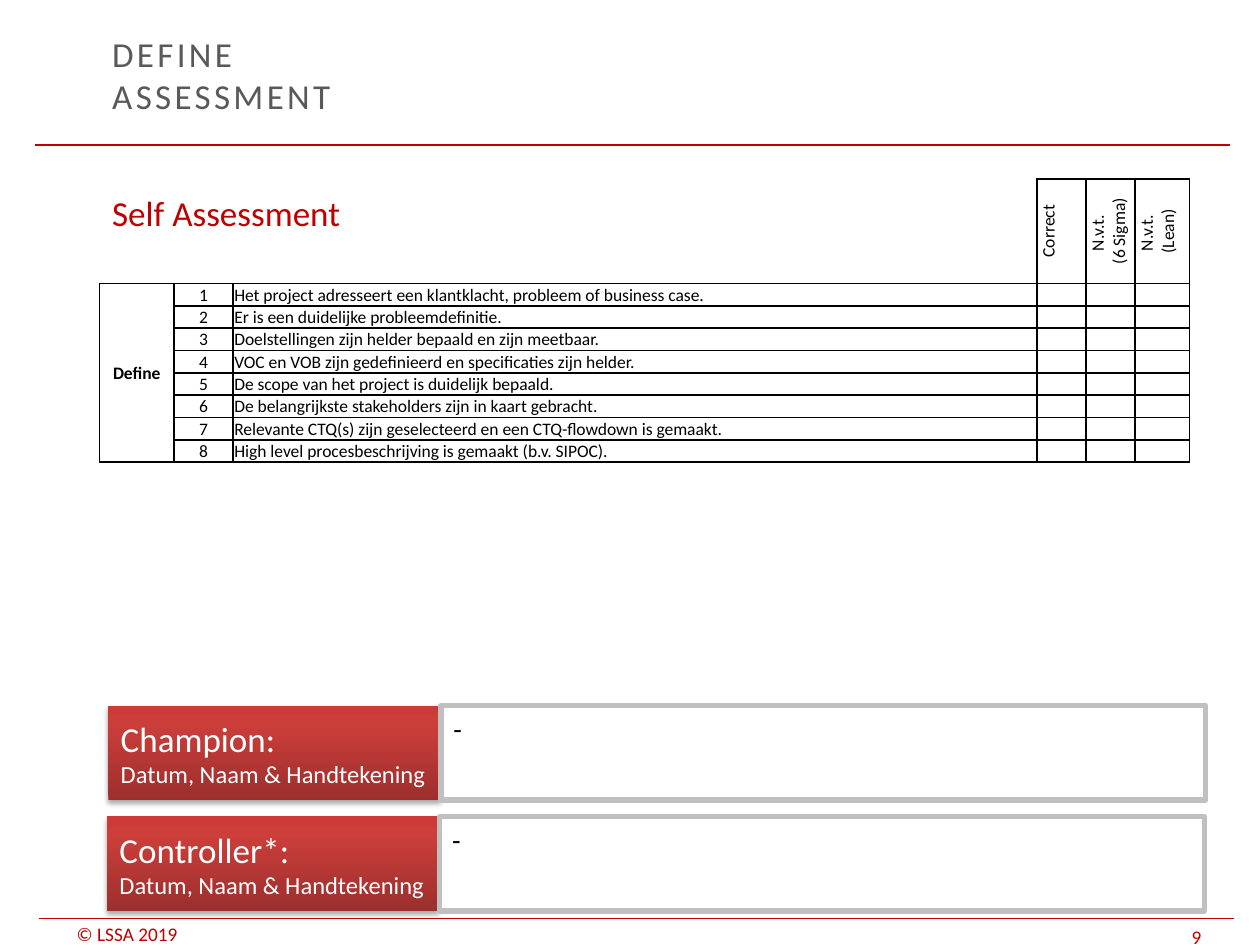
from copy import deepcopy

from lxml.etree import SubElement
from pptx import Presentation
from pptx.dml.color import RGBColor
from pptx.enum.shapes import MSO_CONNECTOR, MSO_SHAPE
from pptx.enum.text import MSO_ANCHOR as Anchor, PP_ALIGN as Align
from pptx.oxml.ns import qn
from pptx.util import Inches, Pt

FONT = "Calibri"
COLORS = {
    "red": "C00000", "grey": "595959", "black": "000000", "white": "FFFFFF",
    "frame": "C0C0C0", "dark": "9C2F2D", "mid": "CB3E3A", "light": "CE3B37",
}
NO_STYLE = "{2D5ABB26-0587-4C30-8999-92F81FD0307C}"
HEADERS = ["Correct", "N.v.t. \v(6 Sigma)", "N.v.t. \v(Lean)"]
CRITERIA = [
    "Het project adresseert een klantklacht, probleem of business case.",
    "Er is een duidelijke probleemdefinitie.",
    "Doelstellingen zijn helder bepaald en zijn meetbaar.",
    "VOC en VOB zijn gedefinieerd en specificaties zijn helder.",
    "De scope van het project is duidelijk bepaald.",
    "De belangrijkste stakeholders zijn in kaart gebracht.",
    "Relevante CTQ(s) zijn geselecteerd en een CTQ-flowdown is gemaakt.",
    "High level procesbeschrijving is gemaakt (b.v. SIPOC).",
]


def rgb(name):
    return RGBColor.from_string(COLORS[name])


def add_text(paragraph, text, size, color, bold=False, align=Align.LEFT):
    paragraph.alignment = align
    runs = []
    for index, line in enumerate(text.split("\v")):
        if index:
            paragraph.add_line_break()
        run = paragraph.add_run()
        run.text = line
        run.font.name = FONT
        run.font.size = Pt(size)
        run.font.bold = bold
        run.font.color.rgb = rgb(color)
        runs.append(run)
    return runs


def place(shape, left, top, width, height):
    shape.left, shape.top = Inches(left), Inches(top)
    shape.width, shape.height = Inches(width), Inches(height)


def add_rule(slide, left, top, width):
    line = slide.shapes.add_connector(
        MSO_CONNECTOR.STRAIGHT, Inches(left), Inches(top), Inches(left + width), Inches(top))
    line.line.color.rgb = rgb("red")
    line.line.width = Pt(0.75)
    SubElement(line._element.spPr, qn("a:effectLst"))


def add_footer_text(slide, text, left, top, width, height):
    box = slide.shapes.add_textbox(Inches(left), Inches(top), Inches(width), Inches(height))
    frame = box.text_frame
    frame.word_wrap = True
    frame.vertical_anchor = Anchor.BOTTOM
    frame.margin_top = frame.margin_bottom = 0
    add_text(frame.paragraphs[0], text, 11, "red")


def fill_title(slide, left, top, width, height):
    title = slide.shapes.title
    place(title, left, top, width, height)
    title.text_frame.vertical_anchor = Anchor.MIDDLE
    for run in add_text(title.text_frame.paragraphs[0], "DEFINE\vASSESSMENT", 20, "grey"):
        run._r.get_or_add_rPr().set("spc", "190")


def fill_body(slide, left, top, width, height):
    body = slide.placeholders[1]
    place(body, left, top, width, height)
    paragraph = body.text_frame.paragraphs[0]
    properties = paragraph._p.get_or_add_pPr()
    properties.set("marL", str(Inches(0.38)))
    properties.set("indent", str(-Inches(0.38)))
    SubElement(properties, qn("a:buNone"))
    paragraph.space_before = Pt(0)
    add_text(paragraph, "Self Assessment", 20, "red")


def format_cell(cell, edges):
    cell.margin_left = cell.margin_right = cell.margin_top = Inches(0.01)
    cell.margin_bottom = 0
    cell.vertical_anchor = Anchor.MIDDLE
    properties = cell._tc.get_or_add_tcPr()
    for edge in "LRTB":
        border = SubElement(properties, qn(f"a:ln{edge}"), w=str(Pt(1)))
        if edge in edges:
            solid = SubElement(border, qn("a:solidFill"))
            SubElement(solid, qn("a:srgbClr"), val=COLORS["black"])
        else:
            SubElement(border, qn("a:noFill"))
    cell.fill.background()
    SubElement(cell.text_frame.paragraphs[0]._p, qn("a:endParaRPr"), sz="1000")


def add_checklist(slide, left, top, width, height):
    widths = [0.59, 0.47, 6.38, 0.39, 0.39, 0.43]
    header_height = 0.83
    row_height = (height - header_height) / len(CRITERIA)
    table = slide.shapes.add_table(
        len(CRITERIA) + 1, len(widths),
        Inches(left), Inches(top), Inches(width), Inches(height)).table
    table.first_row = table.horz_banding = False
    table._tbl.tblPr.find(qn("a:tableStyleId")).text = NO_STYLE
    for column, column_width in zip(table.columns, widths):
        column.width = Inches(column_width)
    for index, row in enumerate(table.rows):
        row.height = Inches(row_height if index else header_height)
        for column, cell in enumerate(row.cells):
            blank = index == 0 and column < 3
            format_cell(cell, ("RB" if column == 2 else "B") if blank else "LRTB")

    def write(row, column, text, **style):
        cell = table.cell(row, column)
        add_text(cell.text_frame.paragraphs[0], text, 10, "black", **style)
        return cell

    for column, header in enumerate(HEADERS, 3):
        cell = write(0, column, header, align=Align.CENTER)
        cell._tc.tcPr.set("vert", "vert270")
    table.cell(1, 0).merge(table.cell(len(CRITERIA), 0))
    write(1, 0, "Define", bold=True, align=Align.CENTER)
    for row, criterion in enumerate(CRITERIA, 1):
        write(row, 1, str(row), align=Align.CENTER)
        write(row, 2, criterion)


def add_rectangle(slide, left, top, width, height):
    shape = slide.shapes.add_shape(
        MSO_SHAPE.RECTANGLE, Inches(left), Inches(top), Inches(width), Inches(height))
    shape.shadow.inherit = False
    shape.text_frame.word_wrap = True
    return shape


def add_red_gradient(shape):
    shape.fill.gradient()
    shape.fill.gradient_angle = 90
    stop_list = shape._element.spPr.find(qn("a:gradFill")).find(qn("a:gsLst"))
    stop_list.append(deepcopy(stop_list[0]))
    stops = [(0, "dark"), (0.8, "mid"), (1, "light")]
    for stop, (position, color) in zip(shape.fill.gradient_stops, stops):
        stop.position = position
        stop.color.rgb = rgb(color)


def add_soft_shadow(shape):
    effects = shape._element.spPr.find(qn("a:effectLst"))
    shadow = SubElement(effects, qn("a:outerShdw"), blurRad=str(Pt(3.1)),
                        dist=str(Pt(1.8)), dir="5400000", rotWithShape="0")
    color = SubElement(shadow, qn("a:srgbClr"), val=COLORS["black"])
    SubElement(color, qn("a:alpha"), val="35000")


def add_signature(slide, role, left, top, width, height):
    label_width, gap = 2.63, 0.01
    label = add_rectangle(slide, left, top, label_width, height)
    label.line.fill.background()
    add_red_gradient(label)
    add_soft_shadow(label)
    frame = label.text_frame
    frame.vertical_anchor = Anchor.MIDDLE
    add_text(frame.paragraphs[0], role, 20, "white")
    add_text(frame.add_paragraph(), "Datum, Naam & Handtekening", 14, "white")

    offset = label_width + gap
    entry = add_rectangle(slide, left + offset, top, width - offset, height)
    entry.fill.solid()
    entry.fill.fore_color.rgb = rgb("white")
    entry.line.color.rgb = rgb("frame")
    entry.line.width = Pt(3)
    entry.text_frame.vertical_anchor = Anchor.TOP
    add_text(entry.text_frame.paragraphs[0], "-", 16, "black")


def main():
    presentation = Presentation()
    presentation.slide_width, presentation.slide_height = Inches(10), Inches(7.5)
    slide = presentation.slides.add_slide(presentation.slide_layouts[1])
    add_footer_text(slide, "© LSSA 2019", 0.51, 7.32, 1.42, 0.18)
    add_footer_text(slide, "9", 9.36, 7.31, 0.64, 0.22)
    add_rule(slide, 0.28, 1.15, 9.48)
    add_rule(slide, 0.31, 7.29, 9.48)
    fill_title(slide, 0.79, 0.26, 7.09, 0.66)
    fill_body(slide, 0.79, 1.47, 8.66, 5.51)
    add_checklist(slide, 0.79, 1.42, 8.66, 2.21)
    add_signature(slide, "Champion:", 0.86, 5.6, 8.71, 0.75)
    add_signature(slide, "Controller*:", 0.85, 6.48, 8.71, 0.75)
    presentation.save("out.pptx")


if __name__ == "__main__":
    main()
